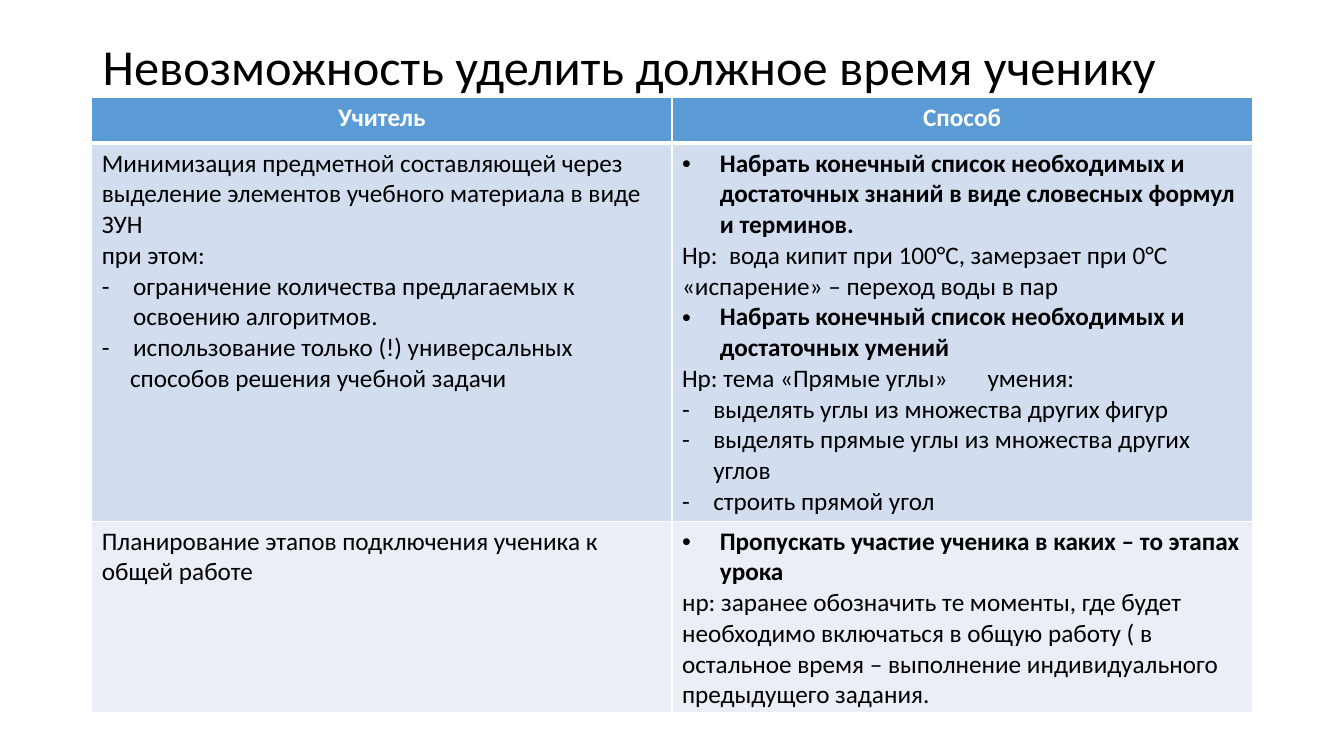
import dataclasses

import lxml.etree
import pptx
import pptx.dml.color
import pptx.enum.text
import pptx.oxml.ns
import pptx.util

Inches = pptx.util.Inches
Pt = pptx.util.Pt


@dataclasses.dataclass(frozen=True)
class Theme:
    font: str = "Calibri"
    title_size: int = 36
    table_size: int = 18
    text: str = "000000"
    header_text: str = "FFFFFF"
    border: str = "FFFFFF"
    row_fills: tuple = ("5B9BD5", "D2DEEF", "EAEFF7")


THEME = Theme()
BULLET = {"bullet": "•", "indent": 0.375, "bold": True}
DASH = {"bullet": "-", "indent": 0.31}

TITLE = "Невозможность уделить должное время ученику"
HEADERS = ("Учитель", "Способ")
# Each cell is a list of (text, format) paragraphs.
BODY = (
    (
        [
            ("Минимизация предметной составляющей через выделение элементов "
             "учебного материала в виде ЗУН", {}),
            ("при этом:", {}),
            ("ограничение количества предлагаемых к освоению алгоритмов.", DASH),
            ("использование только (!) универсальных", DASH),
            ("способов решения учебной задачи", {"indent": 0.28}),
        ],
        [
            ("Набрать конечный список необходимых и достаточных знаний в виде "
             "словесных формул и терминов.", BULLET),
            ("Нр:  вода кипит при 100°С, замерзает при 0°С", {}),
            ("«испарение» – переход воды в пар", {}),
            ("Набрать конечный список необходимых и достаточных умений", BULLET),
            ("Нр: тема «Прямые углы»\tумения:", {"tab_stop": 3.03}),
            ("выделять углы из множества других фигур", DASH),
            ("выделять прямые углы из множества других углов", DASH),
            ("строить прямой угол", DASH),
        ],
    ),
    (
        [("Планирование этапов подключения ученика к общей работе", {})],
        [
            ("Пропускать участие ученика в каких – то этапах урока", BULLET),
            ("нр: заранее обозначить те моменты, где будет необходимо включаться "
             "в общую работу ( в остальное время – выполнение индивидуального "
             "предыдущего задания.", {}),
        ],
    ),
)
COLUMN_WIDTHS = (5.755, 5.755)
ROW_HEIGHTS = (0.45, 3.75, 1.9)


def add_xml(parent, tag, **attributes):
    return lxml.etree.SubElement(parent, pptx.oxml.ns.qn(tag), attributes)


def write_text(paragraph, text, size=THEME.table_size, color=THEME.text, bold=False,
               align=None, line_spacing=None, bullet=None, indent=0, tab_stop=None):
    run = paragraph.add_run()
    run.text = text
    run.font.name = THEME.font
    run.font.size = Pt(size)
    run.font.bold = bold
    run.font.color.rgb = pptx.dml.color.RGBColor.from_string(color)
    if align is not None:
        paragraph.alignment = align
    if line_spacing is not None:
        paragraph.line_spacing = line_spacing
    properties = paragraph._p.get_or_add_pPr()
    if indent:
        properties.set("marL", str(Inches(indent)))
    if bullet:
        properties.set("indent", str(-Inches(indent)))
        add_xml(properties, "a:buFont", typeface="Arial" if bullet == "•" else THEME.font)
        add_xml(properties, "a:buChar", char=bullet)
    if tab_stop:
        stops = add_xml(properties, "a:tabLst")
        add_xml(stops, "a:tab", pos=str(Inches(tab_stop)), algn="l")


def add_title(slide, left, top, width, height):
    shape = slide.shapes.add_textbox(Inches(left), Inches(top), Inches(width), Inches(height))
    frame = shape.text_frame
    frame.word_wrap = True
    frame.vertical_anchor = pptx.enum.text.MSO_ANCHOR.MIDDLE
    write_text(frame.paragraphs[0], TITLE, size=THEME.title_size, line_spacing=0.9)


def style_cell(cell, row):
    """Border the cell, with a thick line under the header, then fill it."""
    properties = cell._tc.get_or_add_tcPr()
    widths = {"L": 1, "R": 1, "T": 3 if row == 1 else 1, "B": 3 if row == 0 else 1}
    for side, width in widths.items():
        line = add_xml(properties, f"a:ln{side}", w=str(Pt(width)))
        add_xml(add_xml(line, "a:solidFill"), "a:srgbClr", val=THEME.border)
    cell.fill.solid()
    cell.fill.fore_color.rgb = pptx.dml.color.RGBColor.from_string(THEME.row_fills[row])


def add_methods_table(slide, left, top):
    header_format = {"color": THEME.header_text, "bold": True,
                     "align": pptx.enum.text.PP_ALIGN.CENTER}
    rows = (tuple([(text, header_format)] for text in HEADERS),) + BODY
    table = slide.shapes.add_table(
        len(rows), len(HEADERS), Inches(left), Inches(top),
        Inches(sum(COLUMN_WIDTHS)), Inches(sum(ROW_HEIGHTS))).table
    for column, width in zip(table.columns, COLUMN_WIDTHS):
        column.width = Inches(width)
    for row, height in zip(table.rows, ROW_HEIGHTS):
        row.height = Inches(height)
    for row_index, row in enumerate(rows):
        for column_index, content in enumerate(row):
            cell = table.cell(row_index, column_index)
            style_cell(cell, row_index)
            frame = cell.text_frame
            for index, (text, text_format) in enumerate(content):
                paragraph = frame.add_paragraph() if index else frame.paragraphs[0]
                write_text(paragraph, text, **text_format)


def main():
    presentation = pptx.Presentation()
    presentation.slide_width = Inches(13.33)
    presentation.slide_height = Inches(7.5)
    slide = presentation.slides.add_slide(presentation.slide_layouts[6])
    add_title(slide, 0.92, 0.4, 11.5, 0.57)
    add_methods_table(slide, 0.91, 0.97)
    presentation.save("out.pptx")


if __name__ == "__main__":
    main()
